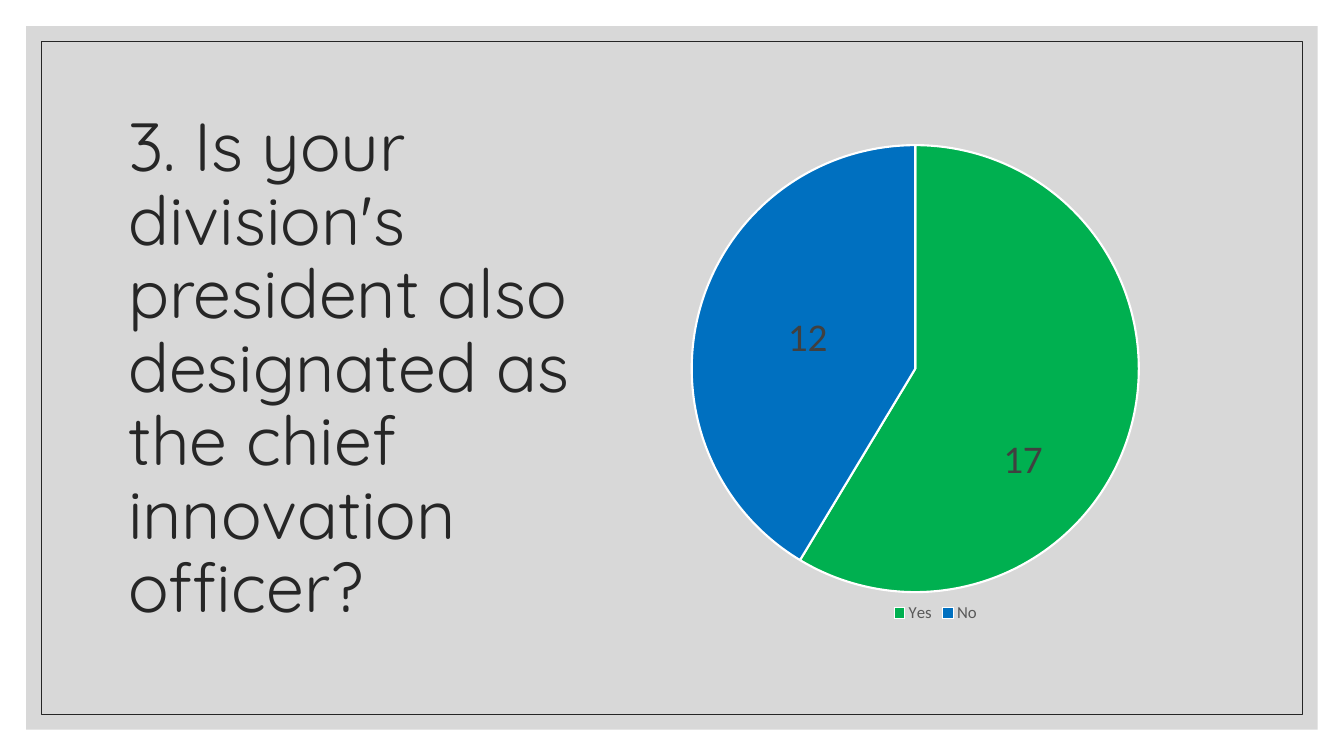
from lxml.etree import SubElement
from pptx import Presentation
from pptx.chart.data import CategoryChartData
from pptx.dml.color import RGBColor
from pptx.enum.chart import XL_CHART_TYPE as ChartType
from pptx.enum.chart import XL_LABEL_POSITION as LabelPosition
from pptx.enum.chart import XL_LEGEND_POSITION as LegendPosition
from pptx.enum.shapes import MSO_SHAPE as Shape
from pptx.enum.text import MSO_ANCHOR as Anchor
from pptx.enum.text import MSO_AUTO_SIZE as AutoSize
from pptx.enum.text import PP_ALIGN as Align
from pptx.oxml.ns import qn
from pptx.util import Pt

QUESTION = "3. Is your division's president also designated as the chief innovation officer?"
ANSWERS = {"Yes": 17, "No": 12}
COLORS = {
    "panel": "D8D8D8", "ink": "262626", "label": "404040", "legend": "595959",
    "edge": "FFFFFF", "Yes": "00B050", "No": "0070C0",
}
PX = 9144
WIDTH, HEIGHT = 1333, 750
PANEL_MARGIN, FRAME_MARGIN = 26, 41
TITLE_BOX = (117, 70, 485, 594)
CHART_BOX = (640, 127, 576, 508)
PIE_LAYOUT = {"layoutTarget": "inner", "xMode": "edge", "yMode": "edge",
              "x": 0.08, "y": 0.03, "w": 0.77, "h": 0.88}
LEGEND_LAYOUT = {"xMode": "edge", "yMode": "edge", "x": 0.42, "y": 0.92}
YES_LABEL_LAYOUT = {"x": 0, "y": 0.12}


def color(name):
    return RGBColor.from_string(COLORS[name])


def emu(box):
    return [length * PX for length in box]


def format_font(font, family, size, ink):
    font.name, font.size, font.bold = family, Pt(size), False
    font.color.rgb = color(ink)


def write(frame, text, family="Quicksand", size=48.6, ink="ink", spacing=0.9):
    frame.text = text
    frame.word_wrap = True
    frame.auto_size = AutoSize.NONE
    frame.vertical_anchor = Anchor.MIDDLE
    paragraph = frame.paragraphs[0]
    paragraph.alignment = Align.LEFT
    paragraph.line_spacing = spacing
    format_font(paragraph.runs[0].font, family, size, ink)


def add_border(slide, margin, fill=None, line=None):
    box = emu((margin, margin, WIDTH - 2 * margin, HEIGHT - 2 * margin))
    border = slide.shapes.add_shape(Shape.RECTANGLE, *box)
    border.shadow.inherit = False
    if fill:
        border.fill.solid()
        border.fill.fore_color.rgb = color(fill)
    else:
        border.fill.background()
    if line:
        border.line.color.rgb = color(line)
        border.line.width = Pt(0.5)
    else:
        border.line.fill.background()


def set_layout(parent, position, settings):
    for old in parent.findall(qn("c:layout")):
        parent.remove(old)
    layout = SubElement(parent, qn("c:layout"))
    manual = SubElement(layout, qn("c:manualLayout"))
    for key, value in settings.items():
        SubElement(manual, qn(f"c:{key}")).set("val", str(value))
    parent.insert(position, layout)


def add_pie(slide):
    answers = CategoryChartData()
    answers.categories = list(ANSWERS)
    answers.add_series("Series 1", list(ANSWERS.values()))
    chart = slide.shapes.add_chart(ChartType.PIE, *emu(CHART_BOX), answers).chart
    chart.has_title = False
    chart.font.name, chart.font.size = "Calibri", Pt(10)
    chart.has_legend = True
    chart.legend.position = LegendPosition.BOTTOM
    chart.legend.include_in_layout = False
    format_font(chart.legend.font, "Calibri", 12, "legend")

    pie = chart.plots[0]
    pie.vary_by_categories = True
    for index, answer in enumerate(ANSWERS):
        slice_ = pie.series[0].points[index]
        slice_.format.fill.solid()
        slice_.format.fill.fore_color.rgb = color(answer)
        slice_.format.line.color.rgb = color("edge")
        slice_.format.line.width = Pt(1.5)
        format_font(slice_.data_label.font, "Calibri", 28, "label")
        slice_.data_label.position = LabelPosition.CENTER

    root = chart.element
    set_layout(root.find(".//" + qn("c:plotArea")), 0, PIE_LAYOUT)
    set_layout(root.find(".//" + qn("c:legend")), 1, LEGEND_LAYOUT)
    set_layout(root.find(".//" + qn("c:dLbl")), 1, YES_LABEL_LAYOUT)


def main():
    deck = Presentation()
    deck.slide_width, deck.slide_height = emu((WIDTH, HEIGHT))
    slide = deck.slides.add_slide(deck.slide_layouts[5])
    add_border(slide, PANEL_MARGIN, fill="panel")
    add_border(slide, FRAME_MARGIN, line="ink")
    title = slide.shapes.title
    title.left, title.top, title.width, title.height = emu(TITLE_BOX)
    write(title.text_frame, QUESTION)
    slide.shapes.element.append(title.element)
    add_pie(slide)
    deck.save("out.pptx")


if __name__ == "__main__":
    main()
